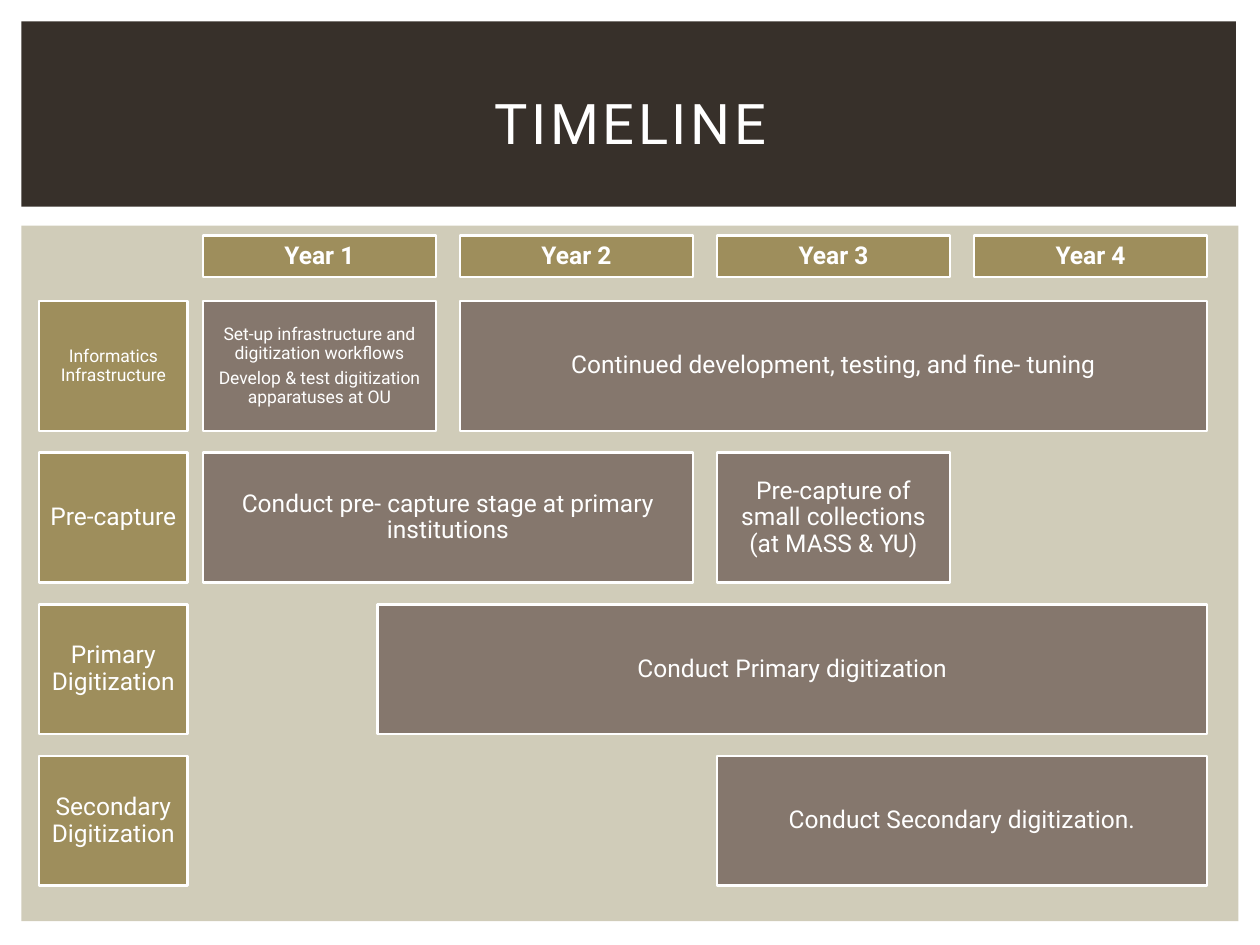
from dataclasses import dataclass

from pptx import Presentation
from pptx.dml.color import RGBColor
from pptx.enum.shapes import MSO_SHAPE
from pptx.enum.text import MSO_ANCHOR, MSO_AUTO_SIZE, PP_ALIGN
from pptx.shapes.autoshape import Shape
from pptx.slide import Slide
from pptx.util import Inches, Pt


@dataclass(frozen=True)
class Theme:
    font: str = "Roboto"
    white: RGBColor = RGBColor(0xFF, 0xFF, 0xFF)
    banner: RGBColor = RGBColor(0x37, 0x30, 0x2A)
    panel: RGBColor = RGBColor(0xD0, 0xCC, 0xB9)
    heading: RGBColor = RGBColor(0x9E, 0x8E, 0x5C)
    task: RGBColor = RGBColor(0x85, 0x77, 0x6D)
    title_size: int = 32
    body_size: int = 14
    small_size: int = 10


@dataclass(frozen=True)
class Box:
    left: float
    top: float
    width: float
    height: float


@dataclass(frozen=True)
class Task:
    """A bar covering the years from start to end, both counted from 0."""
    row: int
    start: float
    end: int
    lines: tuple[str, ...]
    size: int


THEME = Theme()

# Timeline grid, in inches
LABEL_LEFT, LABEL_WIDTH = 0.31, 1.18
YEAR_LEFT, YEAR_WIDTH, YEAR_PITCH = 1.61, 1.85, 2.04
YEAR_TOP, YEAR_HEIGHT = 1.87, 0.33
ROW_TOP, ROW_HEIGHT, ROW_PITCH = 2.39, 1.03, 3.61 / 3

YEARS = ("Year 1", "Year 2", "Year 3", "Year 4")
STAGES = (
    ("Informatics Infrastructure", THEME.small_size),
    ("Pre-capture", THEME.body_size),
    ("Primary Digitization", THEME.body_size),
    ("Secondary Digitization", THEME.body_size),
)
TASKS = (
    Task(0, 0, 0, ("Set-up infrastructure and digitization workflows",
                   "Develop & test digitization apparatuses at OU"), THEME.small_size),
    Task(0, 1, 3, ("Continued development, testing, and fine- tuning",), THEME.body_size),
    Task(1, 0, 1, ("Conduct pre- capture stage at primary institutions",), THEME.body_size),
    Task(1, 2, 2, ("Pre-capture of small collections (at MASS & YU)",), THEME.body_size),
    Task(2, 0.68, 3, ("Conduct Primary digitization",), THEME.body_size),
    Task(3, 2, 3, ("Conduct Secondary digitization.",), THEME.body_size),
)


def year_left(year: float) -> float:
    return YEAR_LEFT + year * YEAR_PITCH


def row_top(row: int) -> float:
    return ROW_TOP + row * ROW_PITCH


def add_rectangle(slide: Slide, box: Box, color: RGBColor) -> Shape:
    shape = slide.shapes.add_shape(
        MSO_SHAPE.RECTANGLE, Inches(box.left), Inches(box.top),
        Inches(box.width), Inches(box.height))
    shape.shadow.inherit = False
    shape.fill.solid()
    shape.fill.fore_color.rgb = color
    shape.line.fill.background()
    return shape


def add_card(slide: Slide, box: Box, color: RGBColor, lines: tuple[str, ...],
             size: int, bold: bool = False) -> None:
    shape = add_rectangle(slide, box, color)
    shape.line.color.rgb = THEME.white
    shape.line.width = Pt(1.5)
    frame = shape.text_frame
    frame.word_wrap = True
    frame.vertical_anchor = MSO_ANCHOR.MIDDLE
    frame.margin_left = frame.margin_right = Inches(0.06)
    frame.margin_top = frame.margin_bottom = Inches(0.06)
    frame.text = "\n".join(lines)
    for paragraph in frame.paragraphs:
        paragraph.alignment = PP_ALIGN.CENTER
        paragraph.line_spacing = 0.9
        paragraph.space_after = Pt(0.35 * size)
        paragraph.font.name = THEME.font
        paragraph.font.size = Pt(size)
        paragraph.font.bold = bold
        paragraph.font.color.rgb = THEME.white


def format_title(slide: Slide, text: str) -> None:
    title = slide.shapes.title
    title.left, title.top = Inches(0.42), Inches(0.39)
    title.width, title.height = Inches(9.17), Inches(1.15)
    frame = title.text_frame
    frame.text = text
    frame.auto_size = MSO_AUTO_SIZE.NONE
    frame.vertical_anchor = MSO_ANCHOR.MIDDLE
    paragraph = frame.paragraphs[0]
    paragraph.alignment = PP_ALIGN.CENTER
    paragraph.font.name = THEME.font
    paragraph.font.size = Pt(THEME.title_size)
    paragraph.font.color.rgb = THEME.white
    # Letter spacing of 2 points
    paragraph.runs[0].font._element.set("spc", "200")
    # Bring the title in front of the banner
    title.element.getparent().append(title.element)


def main() -> None:
    presentation = Presentation()
    presentation.slide_width, presentation.slide_height = Inches(10), Inches(7.5)
    slide = presentation.slides.add_slide(presentation.slide_layouts[5])

    # Background panel, banner and title
    add_rectangle(slide, Box(0.17, 1.79, 9.66, 5.52), THEME.panel)
    add_rectangle(slide, Box(0.17, 0.17, 9.64, 1.47), THEME.banner)
    format_title(slide, "TIMELINE")

    # Task bars
    for task in TASKS:
        left = year_left(task.start)
        width = year_left(task.end) + YEAR_WIDTH - left
        add_card(slide, Box(left, row_top(task.row), width, ROW_HEIGHT),
                 THEME.task, task.lines, task.size)

    # Year headings
    for index, year in enumerate(YEARS):
        add_card(slide, Box(year_left(index), YEAR_TOP, YEAR_WIDTH, YEAR_HEIGHT),
                 THEME.heading, (year,), THEME.body_size, bold=True)

    # Stage labels
    for row, (stage, size) in enumerate(STAGES):
        add_card(slide, Box(LABEL_LEFT, row_top(row), LABEL_WIDTH, ROW_HEIGHT),
                 THEME.heading, (stage,), size)

    presentation.save("out.pptx")


if __name__ == "__main__":
    main()
